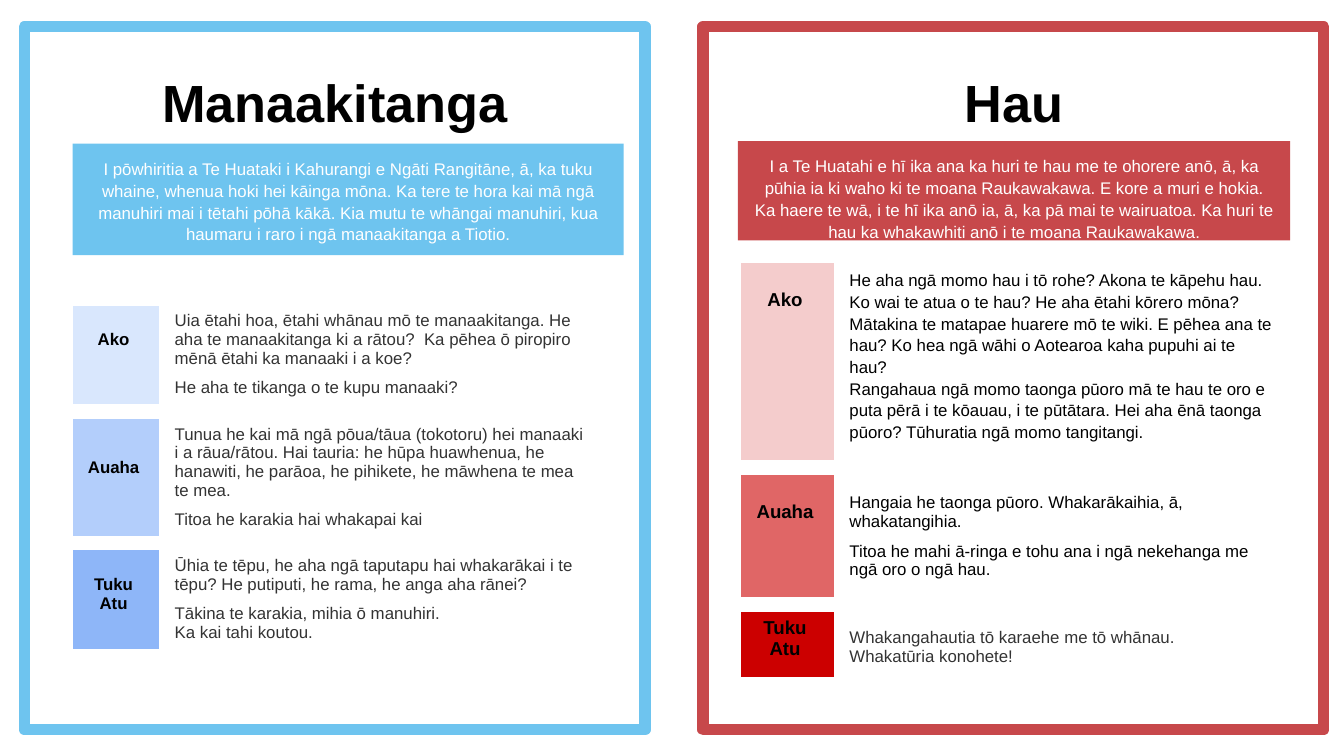
from lxml import etree
from pptx import Presentation
from pptx.dml.color import RGBColor
from pptx.enum.shapes import MSO_SHAPE
from pptx.enum.text import MSO_ANCHOR, MSO_AUTO_SIZE, PP_ALIGN
from pptx.oxml.ns import qn
from pptx.util import Pt

RECTANGLE = MSO_SHAPE.RECTANGLE
TOP = MSO_ANCHOR.TOP
NO_FIT = MSO_AUTO_SIZE.NONE
LEFT, CENTER = PP_ALIGN.LEFT, PP_ALIGN.CENTER

COLORS = {
    "white": "FFFFFF", "black": "000000", "grey": "333333",
    "sky": "6EC4EF", "ice": "D9E7FD", "pale blue": "B3CEFB", "blue": "8EB6F8",
    "brick": "C7484B", "pink": "F4CCCC", "coral": "E06666", "red": "CC0000",
}
FONT = "Arial"
INSET = 7.2
BLOCK_GAP = 5.6
OUTER_BORDER, INNER_BORDER = 9, 3
PANEL_TOP, PANEL_WIDTH, PANEL_HEIGHT = 14.4, 332.6, 376.6

# Boxes are left, top, width, height inside the panel.
# Row: label, fill, height, label top inset, body top inset, body colour,
# line spacing, blocks of paragraphs.
MANAAKITANGA = {
    "left": 13, "color": "sky", "title": "Manaakitanga",
    "title_box": (61.2, 13, 210.2, 38.9),
    "banner_box": (25.9, 62.6, 295.2, 59.8),
    "banner": [
        "I pōwhiritia a Te Huataki i Kahurangi e Ngāti Rangitāne, ā, ka tuku whaine, whenua hoki hei kāinga mōna. "
        "Ka tere te hora kai mā ngā manuhiri mai i tētahi pōhā kākā. Kia mutu te whāngai manuhiri, kua haumaru i "
        "raro i ngā manaakitanga a Tiotio."],
    "table_at": (22.3, 145.4), "columns": (51.1, 236.9), "label_size": 9,
    "rows": [
        ("Ako", "ice", 60.6, 17.3, INSET, "grey", 1, [
            ["Uia ētahi hoa, ētahi whānau mō te manaakitanga. He aha te manaakitanga ki a rātou?  "
             "Ka pēhea ō piropiro mēnā ētahi ka manaaki i a koe?"],
            ["He aha te tikanga o te kupu manaaki?"]]),
        ("Auaha", "pale blue", 70.2, 25.2, INSET, "grey", 1, [
            ["Tunua he kai mā ngā pōua/tāua (tokotoru) hei manaaki i a rāua/rātou. Hai tauria: he hūpa huawhenua, "
             "he hanawiti, he parāoa, he pihikete, he māwhena te mea te mea."],
            ["Titoa he karakia hai whakapai kai"]]),
        ("Tuku Atu", "blue", 60.6, 17.3, INSET, "grey", 1, [
            ["Ūhia te tēpu, he aha ngā taputapu hai whakarākai i te tēpu? He putiputi, he rama, he anga aha rānei?"],
            ["Tākina te karakia, mihia ō manuhiri.", "Ka kai tahi koutou."]]),
    ],
}
HAU = {
    "left": 376.6, "color": "brick", "title": "Hau",
    "title_box": (75.6, 13, 182.2, 34.6),
    "banner_box": (18.7, 61.2, 295.9, 53.3),
    "banner": [
        "I a Te Huatahi e hī ika ana ka huri te hau me te ohorere anō, ā, ka pūhia ia ki waho ki te moana "
        "Raukawakawa. E kore a muri e hokia.",
        "Ka haere te wā, i te hī ika anō ia, ā, ka pā mai te wairuatoa. Ka huri te hau ka whakawhiti anō i te "
        "moana Raukawakawa."],
    "table_at": (16.6, 122.4), "columns": (54.7, 243.4), "label_size": 10,
    "rows": [
        ("Ako", "pink", 113.8, 18.4, INSET, "black", 1.15, [
            ["He aha ngā momo hau i tō rohe? Akona te kāpehu hau. Ko wai te atua o te hau? He aha ētahi kōrero mōna?",
             "Mātakina te matapae huarere mō te wiki. E pēhea ana te hau? Ko hea ngā wāhi o Aotearoa kaha pupuhi ai "
             "te hau?",
             "Rangahaua ngā momo taonga pūoro mā te hau te oro e puta pērā i te kōauau, i te pūtātara. Hei aha ēnā "
             "taonga pūoro? Tūhuratia ngā momo tangitangi."]]),
        ("Auaha", "coral", 73.4, 18.4, 13.9, "black", 1, [
            ["Hangaia he taonga pūoro. Whakarākaihia, ā, whakatangihia."],
            ["Titoa he mahi ā-ringa e tohu ana i ngā nekehanga me ngā oro o ngā hau."]]),
        ("Tuku Atu", "red", 42.5, INSET, 12.8, "grey", 1, [
            ["Whakangahautia tō karaehe me tō whānau.", "Whakatūria konohete!"]]),
    ],
}


def rgb(name):
    return RGBColor.from_string(COLORS[name])


def write(frame, blocks, size, color, bold=False, align=LEFT, spacing=1):
    """Fill a text frame with blocks of paragraphs, set apart by BLOCK_GAP."""
    frame.word_wrap = True
    first = True
    for block in blocks:
        for position, text in enumerate(block):
            paragraph = frame.paragraphs[0] if first else frame.add_paragraph()
            paragraph.text = text
            paragraph.alignment = align
            paragraph.line_spacing = spacing
            paragraph.space_before = Pt(0 if first or position else BLOCK_GAP)
            font = paragraph.font
            font.name, font.size, font.bold = FONT, Pt(size), bold
            font.color.rgb = rgb(color)
            first = False


def set_insets(holder, top=INSET):
    holder.margin_left = holder.margin_right = holder.margin_bottom = Pt(INSET)
    holder.margin_top = Pt(top)
    holder.vertical_anchor = TOP


def set_borders(cell, left, right):
    properties = cell._tc.get_or_add_tcPr()
    sides = {"L": left, "R": right, "T": OUTER_BORDER, "B": OUTER_BORDER}
    for index, (side, width) in enumerate(sides.items()):
        line = etree.Element(qn(f"a:ln{side}"), w=str(Pt(width)))
        fill = etree.SubElement(line, qn("a:solidFill"))
        etree.SubElement(fill, qn("a:srgbClr"), val=COLORS["white"])
        properties.insert(index, line)


def add_rectangle(slide, box):
    rectangle = slide.shapes.add_shape(RECTANGLE, *map(Pt, box))
    rectangle.shadow.inherit = False
    return rectangle


def place_title(heading, text, box):
    heading.left, heading.top, heading.width, heading.height = map(Pt, box)
    frame = heading.text_frame
    frame.auto_size = NO_FIT
    set_insets(frame, top=10)
    write(frame, [[text]], 28, "black", bold=True, align=CENTER)


def add_banner(slide, paragraphs, color, box):
    banner = add_rectangle(slide, box)
    banner.fill.solid()
    banner.fill.fore_color.rgb = rgb(color)
    banner.line.fill.background()
    set_insets(banner.text_frame)
    write(banner.text_frame, [paragraphs], 9, "white", align=CENTER, spacing=1.08)


def add_activities(slide, rows, columns, label_size, left, top):
    height = sum(row[2] for row in rows)
    table = slide.shapes.add_table(len(rows), 2, Pt(left), Pt(top), Pt(sum(columns)), Pt(height)).table
    table.first_row = table.horz_banding = False
    for column, width in zip(table.columns, columns):
        column.width = Pt(width)
    for index, (label, fill, height, label_top, body_top, color, spacing, blocks) in enumerate(rows):
        table.rows[index].height = Pt(height)
        label_cell, body_cell = table.cell(index, 0), table.cell(index, 1)
        set_insets(label_cell, label_top)
        label_cell.fill.solid()
        label_cell.fill.fore_color.rgb = rgb(fill)
        write(label_cell.text_frame, [[label]], label_size, "black", bold=True, align=CENTER)
        set_borders(label_cell, OUTER_BORDER, INNER_BORDER)
        set_insets(body_cell, body_top)
        body_cell.fill.background()
        write(body_cell.text_frame, blocks, 9, color, spacing=spacing)
        set_borders(body_cell, INNER_BORDER, OUTER_BORDER)


def add_panel(slide, heading, panel):
    left, top = panel["left"], PANEL_TOP

    def within(box):
        return (left + box[0], top + box[1], *box[2:])

    place_title(heading, panel["title"], within(panel["title_box"]))
    add_banner(slide, panel["banner"], panel["color"], within(panel["banner_box"]))
    add_activities(slide, panel["rows"], panel["columns"], panel["label_size"], *within(panel["table_at"]))
    border = add_rectangle(slide, (left, top, PANEL_WIDTH, PANEL_HEIGHT))
    border.fill.background()
    border.line.color.rgb = rgb(panel["color"])
    border.line.width = Pt(6)


def main():
    presentation = Presentation()
    presentation.slide_width, presentation.slide_height = Pt(720), Pt(405)
    slide = presentation.slides.add_slide(presentation.slide_layouts[5])
    add_panel(slide, slide.shapes.title, MANAAKITANGA)
    add_panel(slide, slide.shapes.add_textbox(0, 0, 0, 0), HAU)
    presentation.save("out.pptx")


if __name__ == "__main__":
    main()
